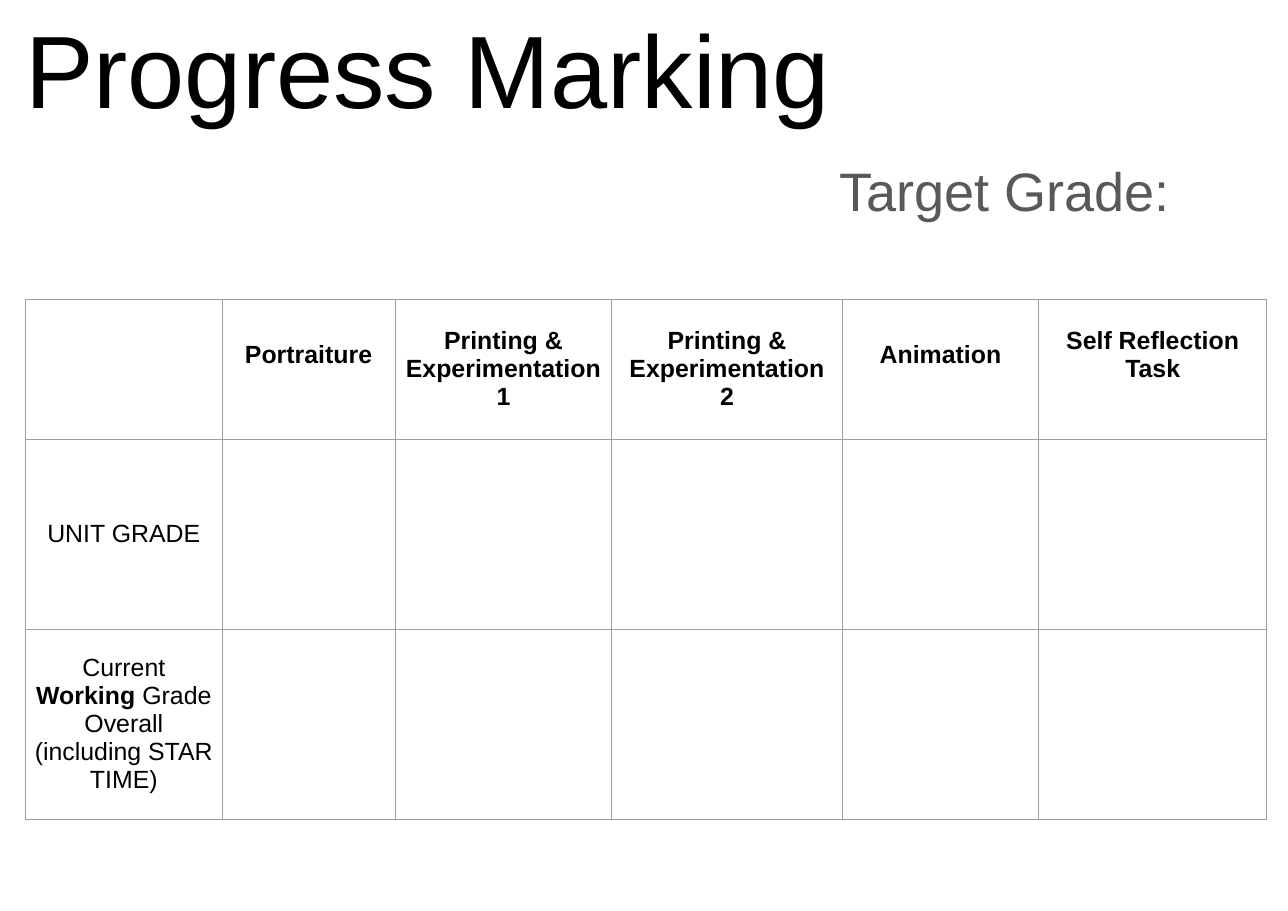
import pptx
import pptx.dml.color
import pptx.enum.text
import pptx.oxml
import pptx.oxml.ns
import pptx.util

PX = 3600  # EMU; 10 px to the millimetre
MIDDLE = pptx.enum.text.MSO_ANCHOR.MIDDLE
CENTER = pptx.enum.text.PP_ALIGN.CENTER
LEFT = pptx.enum.text.PP_ALIGN.LEFT

COLUMN_WIDTHS = [640, 565, 706, 752, 640, 744]
ROW_HEIGHTS = [456, 620, 620]
CELL_MARGIN = 25
RAISED_MARGIN = 116  # bottom margin that lifts a short unit name by half a line
UNITS = ["Portraiture", "Printing & Experimentation 1",
         "Printing & Experimentation 2", "Animation", "Self Reflection Task"]
RAISED_UNITS = {"Portraiture", "Animation", "Self Reflection Task"}
GRADE_ROWS = [
    [("UNIT GRADE", False)],
    [("Current ", False), ("Working", True),
     (" Grade Overall (including STAR TIME)", False)],
]


def px(length):
    return pptx.util.Emu(length * PX)


def color(value):
    return pptx.dml.color.RGBColor.from_string(value)


def write(paragraph, runs, size, ink, align):
    paragraph.alignment = align
    for text, bold in runs:
        run = paragraph.add_run()
        run.text = text
        run.font.name = "Arial"
        run.font.size = pptx.util.Pt(size)
        run.font.bold = bold
        run.font.color.rgb = color(ink)


def set_margins(holder, margin):
    """Give a text frame or a table cell the same margin on all sides."""
    holder.margin_left = holder.margin_right = px(margin)
    holder.margin_top = holder.margin_bottom = px(margin)


def heading(shape, box, text, size, ink, anchor):
    shape.left, shape.top, shape.width, shape.height = map(px, box)
    frame = shape.text_frame
    frame.word_wrap = True
    frame.auto_size = pptx.enum.text.MSO_AUTO_SIZE.NONE
    frame.vertical_anchor = anchor
    set_margins(frame, 46)
    frame.paragraphs[0].line_spacing = 1.0
    write(frame.paragraphs[0], [(text, False)], size, ink, LEFT)


def style_cell(cell):
    cell.vertical_anchor = MIDDLE
    set_margins(cell, CELL_MARGIN)
    properties = cell._tc.get_or_add_tcPr()
    for side in ("lnL", "lnR", "lnT", "lnB"):
        properties.append(pptx.oxml.parse_xml(
            f'<a:{side} {pptx.oxml.ns.nsdecls("a")} w="9525"><a:solidFill>'
            f'<a:srgbClr val="9E9E9E"/></a:solidFill></a:{side}>'))
    cell.fill.background()


def grade_table(slide, left, top):
    table = slide.shapes.add_table(
        len(ROW_HEIGHTS), len(COLUMN_WIDTHS), px(left), px(top),
        px(sum(COLUMN_WIDTHS)), px(sum(ROW_HEIGHTS))).table
    table.first_row = table.horz_banding = False
    for column, width in zip(table.columns, COLUMN_WIDTHS):
        column.width = px(width)
    for row, height in zip(table.rows, ROW_HEIGHTS):
        row.height = px(height)
    for cell in table.iter_cells():
        style_cell(cell)

    labels = {(0, i): [(unit, True)] for i, unit in enumerate(UNITS, 1)}
    labels.update({(i, 0): runs for i, runs in enumerate(GRADE_ROWS, 1)})
    for (row, column), runs in labels.items():
        cell = table.cell(row, column)
        write(cell.text_frame.paragraphs[0], runs, 23, "000000", CENTER)
        if cell.text_frame.text in RAISED_UNITS:
            cell.margin_bottom = px(RAISED_MARGIN)


def progress_slide(deck):
    slide = deck.slides.add_slide(deck.slide_layouts[5])
    slide.background.fill.solid()
    slide.background.fill.fore_color.rgb = color("FFFFFF")
    heading(slide.shapes.title, (36, 89, 2924, 378), "Progress Marking",
            95, "000000", pptx.enum.text.MSO_ANCHOR.BOTTOM)
    target_box = (2690, 467, 1510, 457)
    target = slide.shapes.add_textbox(*map(px, target_box))
    heading(target, target_box, "Target Grade:",
            50, "595959", pptx.enum.text.MSO_ANCHOR.TOP)
    grade_table(slide, 84, 975)


def main():
    deck = pptx.Presentation()
    deck.slide_width, deck.slide_height = px(4200), px(2970)
    progress_slide(deck)
    deck.save("out.pptx")


if __name__ == "__main__":
    main()
